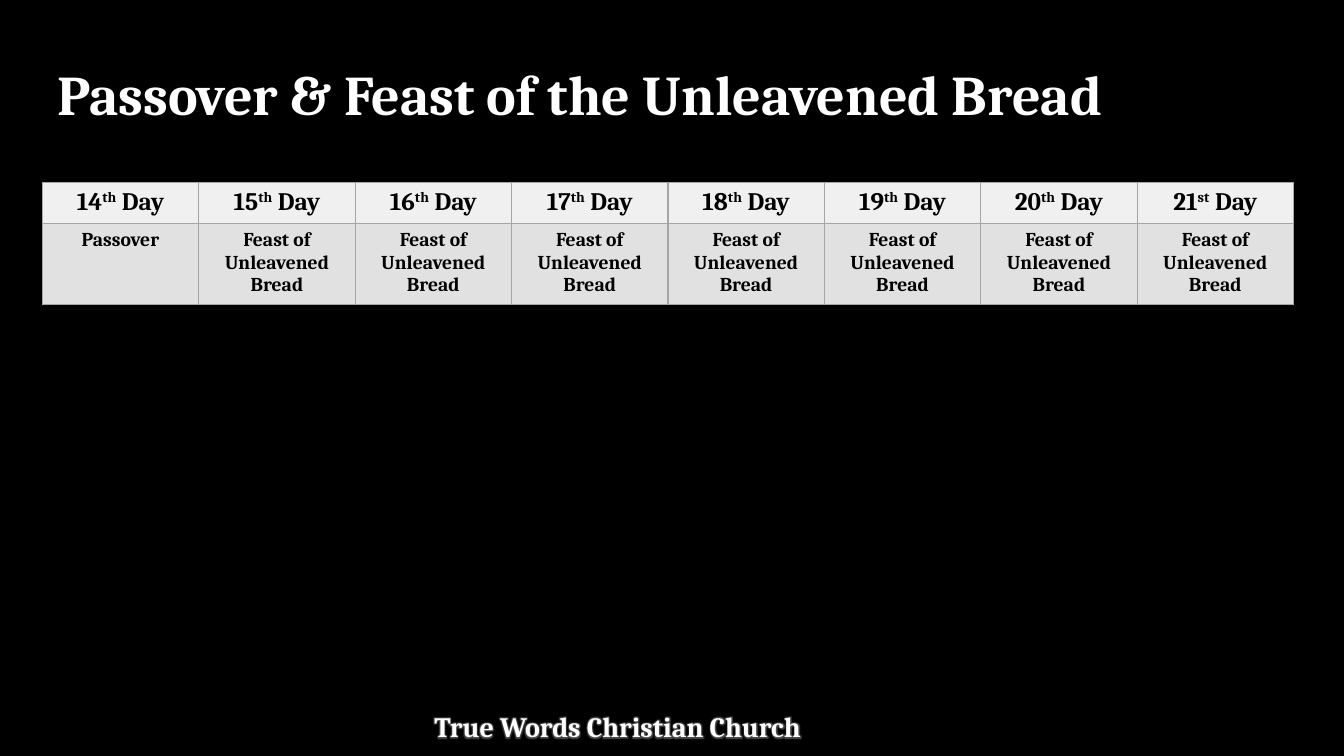
from dataclasses import dataclass

from lxml import etree
from pptx import Presentation
from pptx.dml.color import RGBColor as RGB
from pptx.enum.text import PP_ALIGN as ALIGN
from pptx.oxml import parse_xml
from pptx.oxml.ns import nsdecls, qn
from pptx.util import Inches, Pt


@dataclass(frozen=True)
class Theme:
    font: str = "Cambria"
    background: str = "000000"
    light: str = "FFFFFF"
    dark: str = "000000"
    head_fill: str = "F0F0F0"
    body_fill: str = "E1E1E1"
    border: str = "A5A5A5"
    glow: str = "7F7F7F"
    title: int = 40
    footer: int = 20
    head: int = 18
    body: int = 14


THEME = Theme()
FEAST = "Feast of Unleavened Bread"
DAYS = [(day, "st" if day == 21 else "th", "Passover" if day == 14 else FEAST)
        for day in range(14, 22)]


def add_run(p, text, size, color):
    r = p.add_run()
    r.text = text
    r.font.name = THEME.font
    r.font.size = Pt(size)
    r.font.bold = True
    r.font.color.rgb = RGB.from_string(color)
    return r


def add_line(s, box, text, size):
    """Add a one-line light text box and return its run."""
    tf = s.shapes.add_textbox(*map(Inches, box)).text_frame
    tf.word_wrap = True
    return add_run(tf.paragraphs[0], text, size, THEME.light)


def add_glow(r, radius):
    glow = parse_xml(
        f'<a:effectLst {nsdecls("a")}><a:glow rad="{Pt(radius)}">'
        f'<a:srgbClr val="{THEME.glow}"><a:alpha val="60000"/></a:srgbClr>'
        '</a:glow></a:effectLst>')
    r.font.fill._xPr.find(qn("a:solidFill")).addnext(glow)


def style_cell(cell, fill):
    """Set the fill and the four borders, and return the centred paragraph."""
    tcPr = cell._tc.get_or_add_tcPr()
    for side in ("lnL", "lnR", "lnT", "lnB"):
        ln = etree.SubElement(tcPr, qn(f"a:{side}"), w=str(Pt(1)))
        solid = etree.SubElement(ln, qn("a:solidFill"))
        etree.SubElement(solid, qn("a:srgbClr"), val=THEME.border)
    cell.fill.solid()
    cell.fill.fore_color.rgb = RGB.from_string(fill)
    p = cell.text_frame.paragraphs[0]
    p.alignment = ALIGN.CENTER
    return p


def add_calendar(s, box, days, head_share):
    """Add one column per day: its date above, its feast below."""
    left, top, width, height = map(Inches, box)
    table = s.shapes.add_table(2, len(days), left, top, width, height).table
    table.rows[0].height = int(height * head_share)
    table.rows[1].height = height - table.rows[0].height
    for col, (day, suffix, feast) in enumerate(days):
        table.columns[col].width = width // len(days)
        p = style_cell(table.cell(0, col), THEME.head_fill)
        add_run(p, str(day), THEME.head, THEME.dark)
        r = add_run(p, suffix, THEME.head, THEME.dark)
        r.font._element.set("baseline", "30000")
        add_run(p, " Day", THEME.head, THEME.dark)
        p = style_cell(table.cell(1, col), THEME.body_fill)
        add_run(p, feast, THEME.body, THEME.dark)


def main():
    prs = Presentation()
    prs.slide_width, prs.slide_height = Inches(13.33), Inches(7.5)
    s = prs.slides.add_slide(prs.slide_layouts[6])
    s.background.fill.solid()
    s.background.fill.fore_color.rgb = RGB.from_string(THEME.background)
    footer = add_line(s, (4.21, 6.99, 4.49, 0.44),
                      "True Words Christian Church", THEME.footer)
    add_glow(footer, 5)
    add_calendar(s, (0.42, 1.81, 12.41, 1.21), DAYS, head_share=0.34)
    add_line(s, (0.47, 0.54, 12.3, 0.77),
             "Passover & Feast of the Unleavened Bread", THEME.title)
    prs.save("out.pptx")


if __name__ == "__main__":
    main()
